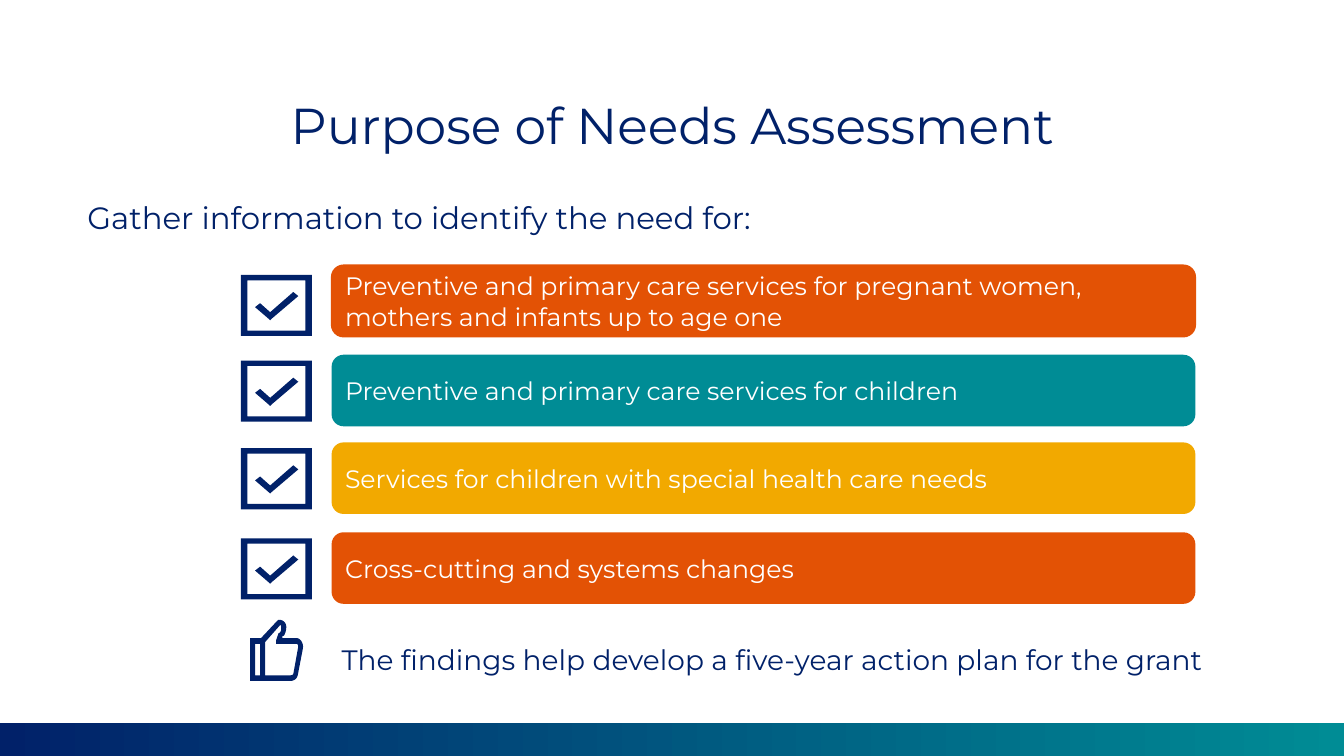
from pptx import Presentation
from pptx.dml.color import RGBColor
from pptx.enum.shapes import MSO_SHAPE
from pptx.enum.text import MSO_ANCHOR, PP_ALIGN
from pptx.util import Pt

COLORS = {
    "navy": "012169",
    "teal": "008C95",
    "orange": "E35205",
    "gold": "F2A900",
    "white": "FFFFFF",
}
FONT = "Montserrat"
UNITS_PER_POINT = 100

# Each need: bar top, checkbox top, bar colour, wording
NEEDS = [
    (189.4, 196.4, "orange",
     "Preventive and primary care services for pregnant women, mothers and infants up to age one"),
    (253.4, 257.6, "teal", "Preventive and primary care services for children"),
    (316, 320.2, "gold", "Services for children with special health care needs"),
    (380.2, 384.6, "orange", "Cross-cutting and systems changes"),
]

# Icon contours in points; a step of six numbers is a cubic curve
CHECKBOX = [
    [(0, 0), (0, 43.6), (50.7, 43.6), (50.7, 0)],
    [(4.7, 3.8), (46, 3.8), (46, 39.8), (4.7, 39.8)],
    [(37.4, 12.2), (20.9, 26.6), (13.7, 20.2), (10.1, 23),
     (19.4, 31), (20.9, 32.4), (22.3, 31), (41, 15.1)],
]
THUMB_UP = [
    [(20.2, 0), (19.4, 0.7), (7.9, 13), (0, 13), (0, 43.6), (28.8, 43.6),
     (31.7, 43.6, 33.8, 41.8, 34.2, 38.9), (37.8, 20.2),
     (38.2, 16.6, 36, 13, 33.1, 13), (23, 13), (23.2, 11.5),
     (23.8, 11.5, 24, 11.3, 24.5, 10.8), (25.2, 9.4, 25.9, 7.2, 25.9, 5),
     (25.9, 2.2, 23.8, 0, 20.9, 0)],
    [(21.6, 3.6), (22.3, 4.1, 22.3, 4.3, 22.3, 5), (22.3, 6.5, 22.2, 7.9, 21.6, 8.6),
     (21.4, 9.2, 20.9, 9.4, 20.7, 9.4), (20.2, 9.4), (20.2, 10),
     (18.7, 14.4), (18.7, 17.1), (33.1, 17.1),
     (33.8, 17.1, 34.6, 18, 34.4, 19.4), (31, 38.2),
     (30.8, 39, 30.2, 39.6, 28.8, 39.6), (10.8, 39.6), (10.8, 15.8)],
    [(3.6, 17.1), (7.2, 17.1), (7.2, 39.6), (3.6, 39.6)],
]


def color(name):
    return RGBColor.from_string(COLORS[name])


def write(shape, wording, size, ink, anchor, align=PP_ALIGN.LEFT, spacing=None):
    frame = shape.text_frame
    frame.word_wrap = True
    frame.vertical_anchor = anchor
    frame.text = wording
    paragraph = frame.paragraphs[0]
    paragraph.alignment = align
    paragraph.line_spacing = spacing
    font = paragraph.runs[0].font
    font.name, font.size = FONT, Pt(size)
    font.color.rgb = color(ink)


def add_text(slide, left, top, width, height, wording, size, **layout):
    box = slide.shapes.add_textbox(Pt(left), Pt(top), Pt(width), Pt(height))
    write(box, wording, size, "navy", **layout)


def add_bar(slide, top, fill, wording):
    bar = slide.shapes.add_shape(
        MSO_SHAPE.ROUNDED_RECTANGLE, Pt(236.9), Pt(top), Pt(617), Pt(51.1))
    bar.shadow.inherit = False
    bar.fill.solid()
    bar.fill.fore_color.rgb = color(fill)
    bar.line.fill.background()
    write(bar, wording, 18, "white", MSO_ANCHOR.MIDDLE)
    return bar


def trace(contour, steps=8):
    """Return the contour's points in drawing units, with curves sampled."""
    points = [contour[0]]
    for step in contour[1:]:
        if len(step) == 2:
            points.append(step)
            continue
        knots = [points[-1], step[:2], step[2:4], step[4:]]
        for i in range(1, steps + 1):
            t = i / steps
            weights = ((1 - t) ** 3, 3 * t * (1 - t) ** 2, 3 * t * t * (1 - t), t ** 3)
            points.append(tuple(
                sum(w * knot[axis] for w, knot in zip(weights, knots)) for axis in (0, 1)))
    return [(x * UNITS_PER_POINT, y * UNITS_PER_POINT) for x, y in points]


def add_icon(slide, left, top, contours):
    outlines = [trace(contour) for contour in contours]
    builder = slide.shapes.build_freeform(*outlines[0][0], scale=Pt(1) / UNITS_PER_POINT)
    for number, outline in enumerate(outlines):
        if number:
            builder.move_to(*outline[0])
        builder.add_line_segments(outline[1:], close=True)
    icon = builder.convert_to_shape(Pt(left), Pt(top))
    icon.shadow.inherit = False
    icon.fill.solid()
    icon.fill.fore_color.rgb = color("navy")
    icon.line.fill.background()


def add_footer_band(slide):
    band = slide.shapes.add_shape(
        MSO_SHAPE.RECTANGLE, Pt(0), Pt(516.4), Pt(960), Pt(24))
    band.shadow.inherit = False
    band.line.fill.background()
    band.fill.gradient()
    band.fill.gradient_angle = 0
    for stop, name in zip(band.fill.gradient_stops, ("navy", "teal")):
        stop.color.rgb = color(name)


def main():
    deck = Presentation()
    deck.slide_width, deck.slide_height = Pt(960), Pt(540)
    slide = deck.slides.add_slide(deck.slide_layouts[6])

    # Heading and lead-in
    add_text(slide, 74.2, 56.9, 812, 69.8, "Purpose of Needs Assessment", 36,
             anchor=MSO_ANCHOR.MIDDLE, align=PP_ALIGN.CENTER, spacing=0.9)
    add_text(slide, 55.4, 141.1, 748, 34.6, "Gather information to identify the need for:", 22,
             anchor=MSO_ANCHOR.TOP, spacing=0.9)

    # Checklist of needs
    bars = []
    for bar_top, checkbox_top, fill, wording in NEEDS:
        bars.append(add_bar(slide, bar_top, fill, wording))
        add_icon(slide, 172.1, checkbox_top, CHECKBOX)
    bars[0].line.color.rgb = color("orange")
    bars[0].line.width = Pt(1)

    # Outcome
    add_icon(slide, 178.6, 442.8, THUMB_UP)
    add_text(slide, 236.9, 442.8, 659.5, 43.9,
             "The findings help develop a five-year action plan for the grant", 20,
             anchor=MSO_ANCHOR.BOTTOM)

    add_footer_band(slide)
    deck.save("out.pptx")


if __name__ == "__main__":
    main()
